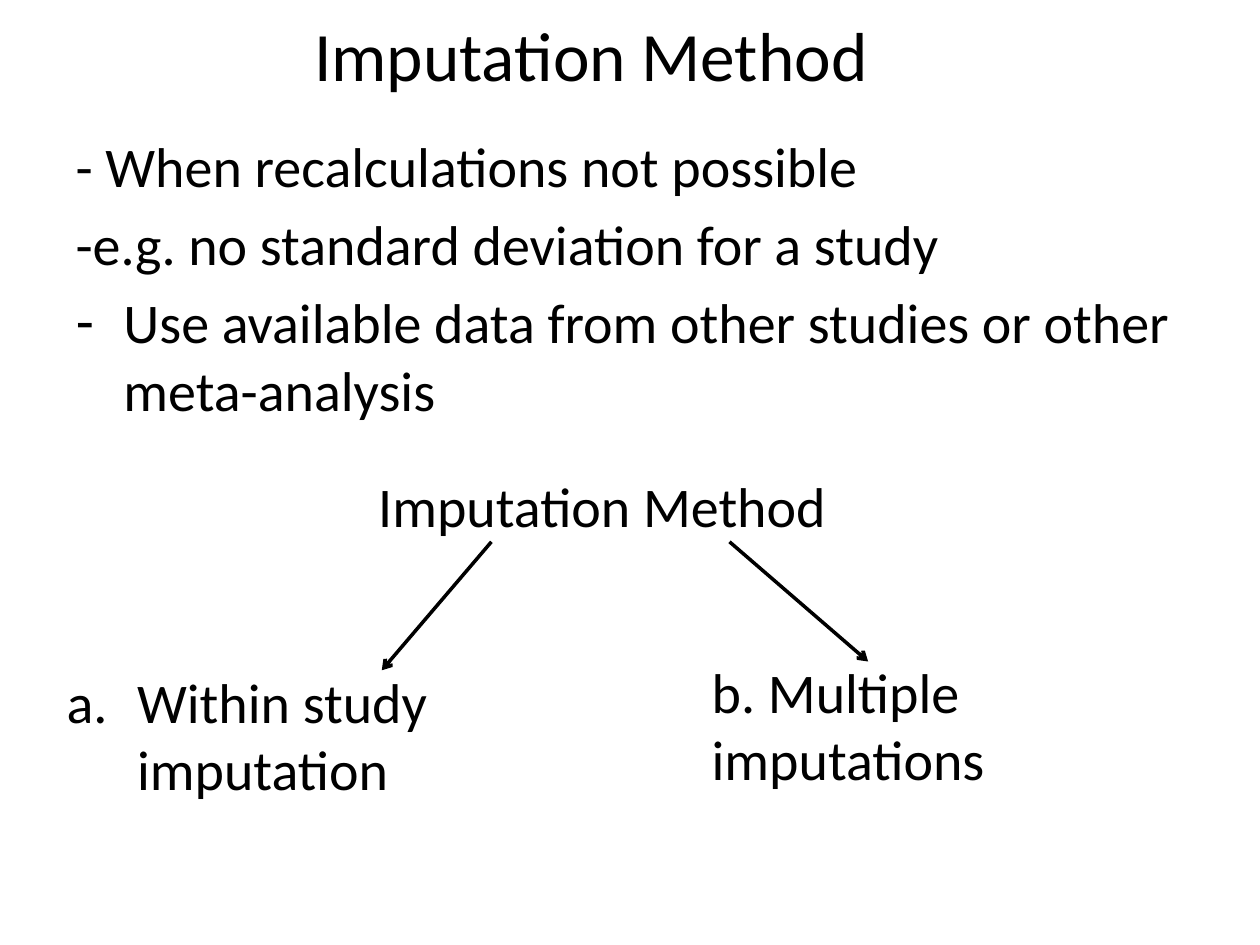
from pptx import Presentation
from pptx.util import Inches, Pt
from pptx.dml.color import RGBColor
from pptx.enum.shapes import MSO_CONNECTOR
from pptx.enum.text import MSO_ANCHOR, MSO_AUTO_SIZE, PP_ALIGN
from pptx.oxml.ns import qn
from lxml.etree import SubElement

COLORS = {"ink": "000000", "paper": "FFFFFF"}
FONT = "Calibri"
BODY = 32


def write(par, text, size=BODY, align=PP_ALIGN.LEFT, indent=0, bullet=None, before=0):
    run = par.add_run()
    run.text = text
    run.font.name = FONT
    run.font.size = Pt(size)
    run.font.color.rgb = RGBColor.from_string(COLORS["ink"])
    par.alignment = align
    par.space_before = Pt(before)
    props = par._p.get_or_add_pPr()
    props.set("marL", str(Inches(indent)))
    props.set("indent", str(-Inches(indent)))
    if bullet is None:
        SubElement(props, qn("a:buNone"))
    elif bullet == "a.":
        SubElement(props, qn("a:buAutoNum"), type="alphaLcPeriod")
    else:
        SubElement(props, qn("a:buChar"), char=bullet)


class Deck:
    def __init__(self):
        self.show = Presentation()
        self.show.slide_width = Inches(10)
        self.show.slide_height = Inches(7.5)
        self.slide = self.show.slides.add_slide(self.show.slide_layouts[1])
        fill = self.slide.background.fill
        fill.solid()
        fill.fore_color.rgb = RGBColor.from_string(COLORS["paper"])

    def place(self, shape, box, anchor=MSO_ANCHOR.TOP):
        shape.left, shape.top, shape.width, shape.height = map(Inches, box)
        frame = shape.text_frame
        frame.word_wrap = True
        frame.auto_size = MSO_AUTO_SIZE.NONE
        frame.vertical_anchor = anchor
        return frame

    def title(self, text, box):
        frame = self.place(self.slide.shapes.title, box, MSO_ANCHOR.MIDDLE)
        write(frame.paragraphs[0], text, size=39.6, align=PP_ALIGN.CENTER)

    def body(self, items, box):
        frame = self.place(self.slide.placeholders[1], box)
        for i, (text, bullet) in enumerate(items):
            par = frame.add_paragraph() if i else frame.paragraphs[0]
            write(par, text, indent=0.38, bullet=bullet, before=BODY * 0.2)

    def label(self, text, box, anchor=MSO_ANCHOR.TOP, **style):
        shape = self.slide.shapes.add_textbox(*map(Inches, box))
        write(self.place(shape, box, anchor).paragraphs[0], text, **style)

    def arrow(self, start, end):
        line = self.slide.shapes.add_connector(
            MSO_CONNECTOR.STRAIGHT, *map(Inches, start + end))
        line.line.color.rgb = RGBColor.from_string(COLORS["ink"])
        line.line.width = Pt(2)
        SubElement(line.line._get_or_add_ln(), qn("a:tailEnd"), type="arrow")
        SubElement(line._element.spPr, qn("a:effectLst"))


def main():
    deck = Deck()
    deck.title("Imputation Method", (0.19, 0, 9, 0.85))
    deck.body([
        ("- When recalculations not possible", None),
        ("-e.g. no standard deviation for a study", None),
        ("Use available data from other studies or other meta-analysis", "-"),
    ], (0.5, 0.99, 9, 2.6))
    deck.label("Within study imputation", (0.43, 5.25, 3.31, 1.34),
               indent=0.56, bullet="a.")
    deck.label("b. Multiple imputations", (5.55, 5.17, 3.86, 1.48))
    deck.arrow((3.9, 4.3), (3.03, 5.32))
    deck.arrow((5.79, 4.3), (6.89, 5.25))
    deck.label("Imputation Method", (0.28, 3.58, 9, 0.85),
               anchor=MSO_ANCHOR.MIDDLE, align=PP_ALIGN.CENTER)
    deck.show.save("out.pptx")


if __name__ == "__main__":
    main()
